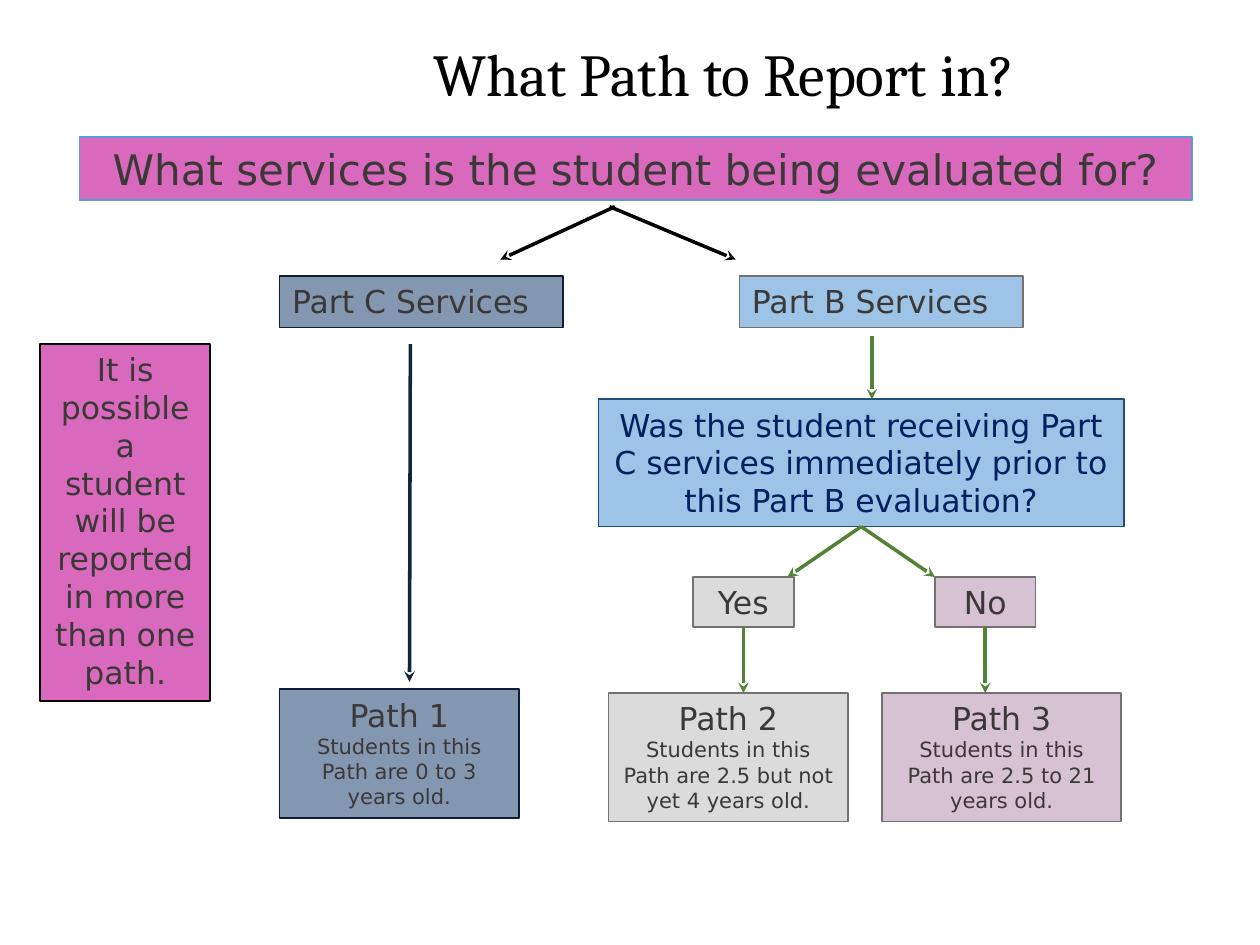
import pptx
import pptx.util
import pptx.dml.color
import pptx.enum.shapes
import pptx.enum.text
import pptx.oxml.ns
from lxml import etree

Pt = pptx.util.Pt
CENTER = pptx.enum.text.PP_ALIGN.CENTER
LEFT = pptx.enum.text.PP_ALIGN.LEFT
BOTTOM = 2

COLORS = {
    "black": "000000", "text": "3B3838", "navy text": "002060",
    "pink": "D969BC", "slate": "8497B0", "sky": "9DC3E6",
    "gray": "DBDBDB", "mauve": "D6C2D2",
    "banner line": "5B9BD5", "slate line": "101C32", "gray line": "767171",
    "question line": "1F4E79", "navy arrow": "0F273D", "green arrow": "548235",
}


def rgb(name):
    return pptx.dml.color.RGBColor.from_string(COLORS[name])


def write(paragraph, text, size=18, font="DejaVu Sans", color="text", align=CENTER, spacing=None):
    paragraph.alignment = align
    paragraph.line_spacing = spacing
    run = paragraph.add_run()
    run.text = text
    run.font.size = Pt(size)
    run.font.name = font
    run.font.color.rgb = rgb(color)


def set_frame(shape):
    """Give a shape wrapped, top-anchored text and return its text frame."""
    frame = shape.text_frame
    frame.word_wrap = True
    frame.vertical_anchor = pptx.enum.text.MSO_ANCHOR.TOP
    return frame


def add_box(slide, box, text, fill, line, detail=None, **text_format):
    """Add a filled rectangle, with an optional smaller second paragraph."""
    shape = slide.shapes.add_shape(
        pptx.enum.shapes.MSO_SHAPE.RECTANGLE, *(Pt(length) for length in box))
    shape.shadow.inherit = False
    shape.fill.solid()
    shape.fill.fore_color.rgb = rgb(fill)
    shape.line.color.rgb = rgb(line)
    shape.line.width = Pt(1)
    frame = set_frame(shape)
    frame.auto_size = pptx.enum.text.MSO_AUTO_SIZE.SHAPE_TO_FIT_TEXT
    write(frame.paragraphs[0], text, **text_format)
    if detail:
        write(frame.add_paragraph(), detail, size=12)
    return shape


def add_arrow(slide, start, end, color, source=None):
    """Draw an arrow, joined to the bottom of the source box if there is one."""
    connector = slide.shapes.add_connector(
        pptx.enum.shapes.MSO_CONNECTOR.STRAIGHT,
        *(Pt(length) for length in (*start, *end)))
    if source is not None:
        connector.begin_connect(source, BOTTOM)
    connector.line.color.rgb = rgb(color)
    connector.line.width = Pt(2)
    qn = pptx.oxml.ns.qn
    line = connector.line._get_or_add_ln()
    etree.SubElement(line, qn("a:tailEnd"), type="stealth")
    etree.SubElement(connector._element.spPr, qn("a:effectLst"))


def add_title(slide, box):
    shape = slide.shapes.add_textbox(*(Pt(length) for length in box))
    write(set_frame(shape).paragraphs[0], "What Path to Report in?",
          size=34, font="Cambria", color="black", spacing=0.9)


def add_opening_question(slide, box):
    left, top, width, height = box
    add_box(slide, box, "What services is the student being evaluated for?",
            "pink", "banner line", size=24)
    for start_x, end_x in ((306, 240.5), (303, 375)):
        add_arrow(slide, (left + start_x, top + 39.6), (left + end_x, top + 69.8), "black")


def add_part_c(slide, box):
    left, top, width, height = box
    path_height = 73.4
    path_top = top + height - path_height
    add_box(slide, (left, top, width, 29.5), "Part C Services",
            "slate", "slate line", align=LEFT)
    add_box(slide, (left, path_top, 136.8, path_height), "Path 1", "slate", "slate line",
            detail="Students in this Path are 0 to 3 years old.")
    add_arrow(slide, (left + 74.7, top + 38.9), (left + 74.2, path_top - 4.3), "navy arrow")


def add_part_b(slide, box):
    left, top, width, height = box
    path_height = 73.4
    path_top = top + height - path_height
    question_top, question_height = top + 70.5, 72.7
    question_bottom = question_top + question_height
    answer_top, answer_width, answer_height = top + 172, 57.6, 28.8

    add_box(slide, (left + 80.6, top, 162, 29.5), "Part B Services",
            "sky", "gray line", align=LEFT)
    question = add_box(
        slide, (left, question_top, width, question_height),
        "Was the student receiving Part C services immediately prior to this Part B evaluation?",
        "sky", "question line", color="navy text")
    add_arrow(slide, (left + 156.2, top + 34.5), (left + 156.2, question_top), "green arrow")

    branches = (
        ("Yes", 54, 108, "gray", "Path 2", 5.8,
         "Students in this Path are 2.5 but not yet 4 years old."),
        ("No", 192.2, 192.2, "mauve", "Path 3", 162,
         "Students in this Path are 2.5 to 21 years old."),
    )
    for answer, answer_x, branch_x, fill, path_name, path_x, detail in branches:
        answer_box = add_box(
            slide, (left + answer_x, answer_top, answer_width, answer_height),
            answer, fill, "gray line")
        add_box(slide, (left + path_x, path_top, 136.8, path_height),
                path_name, fill, "gray line", detail=detail)
        add_arrow(slide, (left + width / 2, question_bottom),
                  (left + branch_x, answer_top), "green arrow", source=question)
        answer_center = left + answer_x + answer_width / 2
        add_arrow(slide, (answer_center, answer_top + answer_height),
                  (answer_center, path_top), "green arrow", source=answer_box)


def add_note(slide, box):
    add_box(slide, box, "It is possible a student will be reported in more than one path.",
            "pink", "black")


def main():
    presentation = pptx.Presentation()
    presentation.slide_width = Pt(720)
    presentation.slide_height = Pt(540)
    slide = presentation.slides.add_slide(presentation.slide_layouts[6])
    add_title(slide, (108, 22.3, 612, 66.2))
    add_opening_question(slide, (45.4, 78.5, 635.8, 36))
    add_part_c(slide, (159.8, 157.7, 162, 309.6))
    add_part_b(slide, (342, 157.7, 300.2, 311.7))
    add_note(slide, (23, 196.6, 97.2, 203.8))
    presentation.save("out.pptx")


if __name__ == "__main__":
    main()
